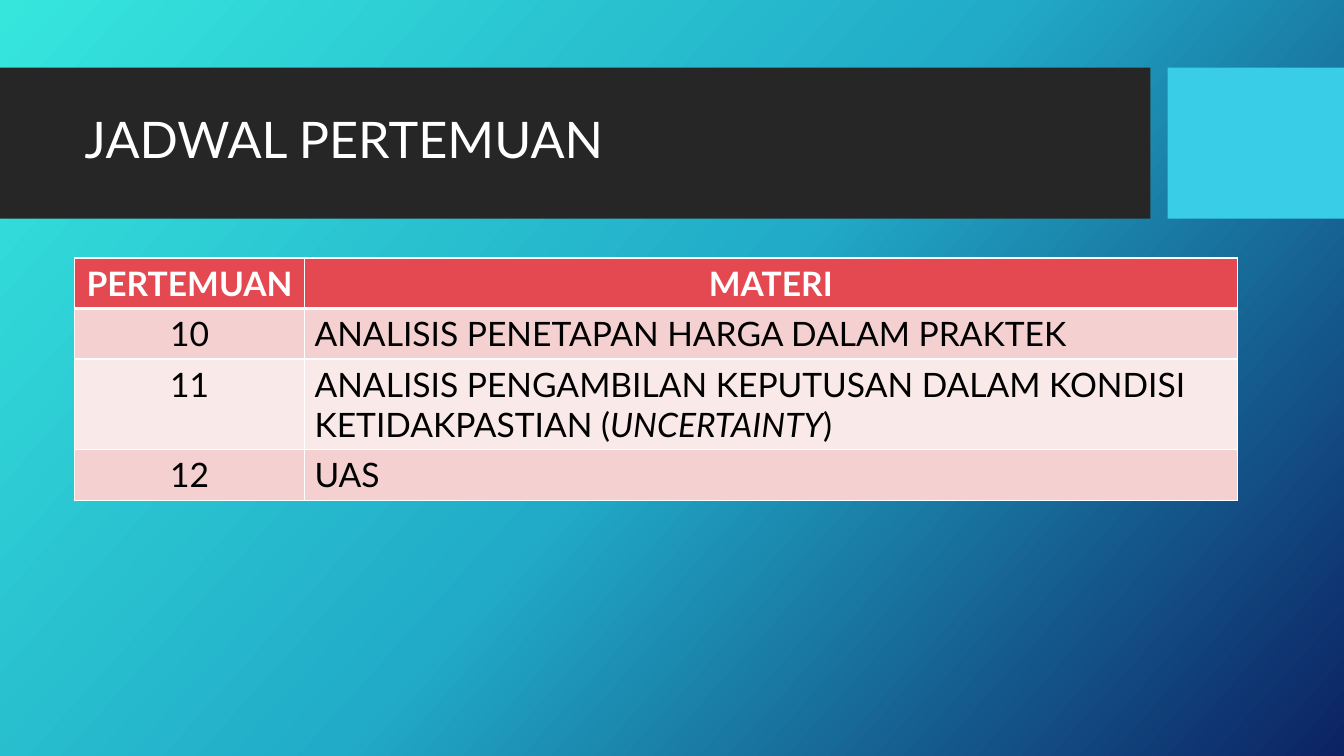
from lxml import etree
from pptx import Presentation
from pptx.dml.color import RGBColor
from pptx.enum.shapes import MSO_SHAPE
from pptx.enum.text import MSO_ANCHOR, PP_ALIGN
from pptx.oxml import parse_xml
from pptx.oxml.ns import nsdecls, qn
from pptx.util import Inches, Pt

RECTANGLE = MSO_SHAPE.RECTANGLE
MIDDLE = MSO_ANCHOR.MIDDLE
LEFT, CENTER = PP_ALIGN.LEFT, PP_ALIGN.CENTER

FONT = "Lato"
COLORS = {
    "white": "FFFFFF", "black": "000000",
    "title_band": "262626", "accent_band": "39CDE7",
    "header": "E44951", "odd_row": "F5D0D0", "even_row": "FAE9E9",
}
BACKGROUND_STOPS = [(0, "36E6DD"), (50, "21ABC8"), (100, "0C2263")]
BACKGROUND_ANGLE = 42
MARGIN = 0.74
BAND_TOP, BAND_HEIGHT = 0.67, 1.5
BANDS = [(0, 11.41, "title_band"), (11.58, 1.75, "accent_band")]
COLUMN_WIDTHS = [2.28, 9.25]
ROW_HEIGHTS = [0.5, 0.5, 0.9, 0.5]

# Each cell is a list of runs: (text, italic)
SCHEDULE = [
    [[("PERTEMUAN", False)], [("MATERI", False)]],
    [[("10", False)], [("ANALISIS PENETAPAN HARGA DALAM PRAKTEK", False)]],
    [[("11", False)],
     [("ANALISIS PENGAMBILAN KEPUTUSAN DALAM KONDISI KETIDAKPASTIAN (", False),
      ("UNCERTAINTY", True), (")", False)]],
    [[("12", False)], [("UAS", False)]],
]


def format_font(font, size, color):
    font.name = FONT
    font.size = Pt(size)
    font.color.rgb = RGBColor.from_string(COLORS[color])


def add_border(cell, side, position, width):
    line = parse_xml(
        f'<a:{side} {nsdecls("a")} w="{Pt(width)}"><a:solidFill>'
        f'<a:srgbClr val="{COLORS["white"]}"/></a:solidFill></a:{side}>')
    cell._tc.get_or_add_tcPr().insert(position, line)


prs = Presentation()
prs.slide_width, prs.slide_height = Inches(13.33), Inches(7.5)
slide = prs.slides.add_slide(prs.slide_layouts[5])

# Diagonal gradient background with three stops
background = slide.background.fill
background.gradient()
background.gradient_angle = 360 - BACKGROUND_ANGLE
stop_list = slide._element.find(".//" + qn("a:gsLst"))
for stop in list(stop_list):
    stop_list.remove(stop)
for position, color in BACKGROUND_STOPS:
    stop = etree.SubElement(stop_list, qn("a:gs"), pos=str(position * 1000))
    etree.SubElement(stop, qn("a:srgbClr"), val=color)

# Title bands
for left, width, color in BANDS:
    band = slide.shapes.add_shape(RECTANGLE, Inches(left), Inches(BAND_TOP),
                                  Inches(width), Inches(BAND_HEIGHT))
    band.shadow.inherit = False
    band.fill.solid()
    band.fill.fore_color.rgb = RGBColor.from_string(COLORS[color])
    band.line.fill.background()

# Title, brought in front of the bands
title = slide.shapes.title
slide.shapes._spTree.append(title._element)
title.left, title.top = Inches(MARGIN), Inches(0.82)
title.width, title.height = Inches(10.51), Inches(1.18)
title.text_frame.text = "JADWAL PERTEMUAN"
title.text_frame.vertical_anchor = MIDDLE
heading = title.text_frame.paragraphs[0]
heading.alignment = LEFT
heading.line_spacing = 0.9
format_font(heading.runs[0].font, 36, "white")

# Meeting schedule
schedule = slide.shapes.add_table(
    len(ROW_HEIGHTS), len(COLUMN_WIDTHS), Inches(MARGIN), Inches(2.56),
    Inches(sum(COLUMN_WIDTHS)), Inches(sum(ROW_HEIGHTS))).table
for column, width in zip(schedule.columns, COLUMN_WIDTHS):
    column.width = Inches(width)
for row, height in zip(schedule.rows, ROW_HEIGHTS):
    row.height = Inches(height)

for r, row_cells in enumerate(SCHEDULE):
    is_header = r == 0
    row_fill = "header" if is_header else "odd_row" if r % 2 else "even_row"
    for c, runs in enumerate(row_cells):
        cell = schedule.cell(r, c)
        cell.fill.solid()
        cell.fill.fore_color.rgb = RGBColor.from_string(COLORS[row_fill])
        for position, side in enumerate(["lnL", "lnR", "lnT", "lnB"]):
            under_header = (is_header and side == "lnB") or (r == 1 and side == "lnT")
            add_border(cell, side, position, 3 if under_header else 1)
        paragraph = cell.text_frame.paragraphs[0]
        paragraph.alignment = CENTER if is_header or c == 0 else LEFT
        for text, italic in runs:
            run = paragraph.add_run()
            run.text = text
            format_font(run.font, 24, "white" if is_header else "black")
            run.font.bold = is_header
            run.font.italic = italic

prs.save("out.pptx")
